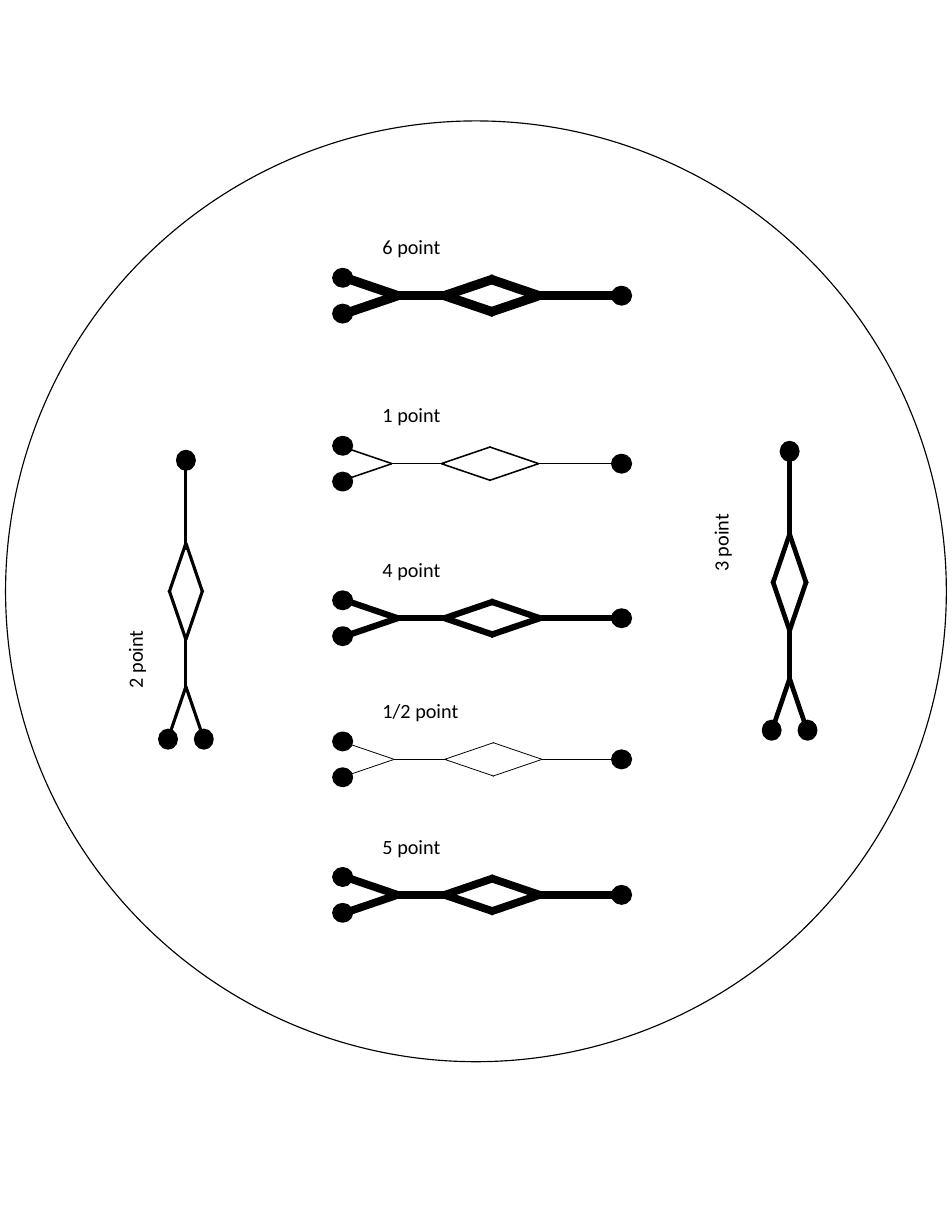
"""Build a circular wafer layout of branching channels in seven line weights."""
from dataclasses import dataclass

from lxml.etree import SubElement
from pptx import Presentation
from pptx.dml.color import RGBColor
from pptx.enum.shapes import MSO_CONNECTOR as Connector, MSO_SHAPE as Shape
from pptx.enum.text import MSO_AUTO_SIZE as AutoSize
from pptx.oxml.ns import qn
from pptx.util import Inches, Pt


@dataclass(frozen=True)
class Theme:
    ink: RGBColor = RGBColor(0, 0, 0)
    font: str = "Calibri"
    label_size: float = 13
    wafer_line: float = 0.75
    port_line: float = 2


@dataclass(frozen=True)
class Channel:
    label: str
    weight: float
    origin: tuple
    fork: float
    diamond: float
    right_half: float
    outlet: float
    label_at: tuple = (0.62, -0.44)
    label_width: float = 0.75
    upright: bool = False

    def place(self, along, across):
        x, y = self.origin
        return (x + across, y - along) if self.upright else (x + along, y + across)


THEME = Theme()
PAGE_SIZE = (8.5, 11)
WAFER = (0.05, 1.08, 8.4, 8.4)
CHANNELS = [
    Channel("6 point", 6, (3.06, 2.64), 0.05, 0.91, 1.31, 1.69),
    Channel("1 point", 1, (3.06, 4.14), 0, 0.88, 1.31, 1.73),
    Channel("4 point", 4, (3.06, 5.52), 0.05, 0.91, 1.32, 1.7),
    Channel("1/2 point", 0.5, (3.06, 6.78), 0.02, 0.91, 1.34, 1.77,
            label_at=(0.7, -0.44), label_width=0.91),
    Channel("5 point", 5, (3.06, 7.99), 0.05, 0.91, 1.32, 1.7),
    Channel("2 point", 2, (1.66, 6.6), 0.03, 0.89, 1.31, 1.69,
            label_at=(0.72, -0.46), upright=True),
    Channel("3 point", 3, (7.05, 6.52), 0.02, 0.89, 1.31, 1.69,
            label_at=(1.68, -0.62), upright=True),
]
BRANCH, STEM, OUTLET = 0.44, 0.47, 0.72
SPREAD = 0.15
PORTS = [(0, -0.16), (0, 0.16), (2.49, 0)]
PORT_SIZE = (0.16, 0.15)
LABEL_HEIGHT = 0.33
LABEL_INSETS = (0.11, 0.06)


def centred(centre, size):
    return [Inches(c - s / 2) for c, s in zip(centre, size)] + [Inches(s) for s in size]


def add_circle(shapes, bounds, weight, filled):
    circle = shapes.add_shape(Shape.OVAL, *bounds)
    circle.shadow.inherit = False
    if filled:
        circle.fill.solid()
        circle.fill.fore_color.rgb = THEME.ink
    else:
        circle.fill.background()
    circle.line.color.rgb = THEME.ink
    circle.line.width = Pt(weight)


def add_line(shapes, start, end, weight):
    line = shapes.add_connector(Connector.STRAIGHT, *map(Inches, start + end))
    line.line.color.rgb = THEME.ink
    line.line.width = Pt(weight)
    SubElement(line._element.spPr, qn("a:effectLst"))


def channel_segments(channel):
    fork_tip = channel.fork + BRANCH
    segments = [
        ((fork_tip, 0), (fork_tip + STEM, 0)),
        ((channel.outlet, 0), (channel.outlet + OUTLET, 0)),
    ]
    for side in (-SPREAD, SPREAD):
        segments += [
            ((channel.fork, side), (fork_tip, 0)),
            ((channel.diamond + BRANCH, side), (channel.diamond, 0)),
            ((channel.right_half, side), (channel.right_half + BRANCH, 0)),
        ]
    return segments


def add_label(page, channel):
    size = (channel.label_width, LABEL_HEIGHT)
    box = page.shapes.add_textbox(*centred(channel.place(*channel.label_at), size))
    box.rotation = 270 if channel.upright else 0
    frame = box.text_frame
    frame.word_wrap = False
    frame.auto_size = AutoSize.SHAPE_TO_FIT_TEXT
    frame.margin_left = frame.margin_right = Inches(LABEL_INSETS[0])
    frame.margin_top = frame.margin_bottom = Inches(LABEL_INSETS[1])
    para = frame.paragraphs[0]
    para.text = channel.label
    para.font.name = THEME.font
    para.font.size = Pt(THEME.label_size)
    para.font.color.rgb = THEME.ink


def add_channel(page, channel):
    shapes = page.shapes.add_group_shape().shapes
    for start, end in channel_segments(channel):
        add_line(shapes, channel.place(*start), channel.place(*end), channel.weight)
    port_size = PORT_SIZE[::-1] if channel.upright else PORT_SIZE
    for port in PORTS:
        add_circle(shapes, centred(channel.place(*port), port_size), THEME.port_line, True)
    add_label(page, channel)


def main():
    deck = Presentation()
    deck.slide_width, deck.slide_height = map(Inches, PAGE_SIZE)
    page = deck.slides.add_slide(deck.slide_layouts[6])
    add_circle(page.shapes, map(Inches, WAFER), THEME.wafer_line, False)
    for channel in CHANNELS:
        add_channel(page, channel)
    deck.save("out.pptx")


if __name__ == "__main__":
    main()
